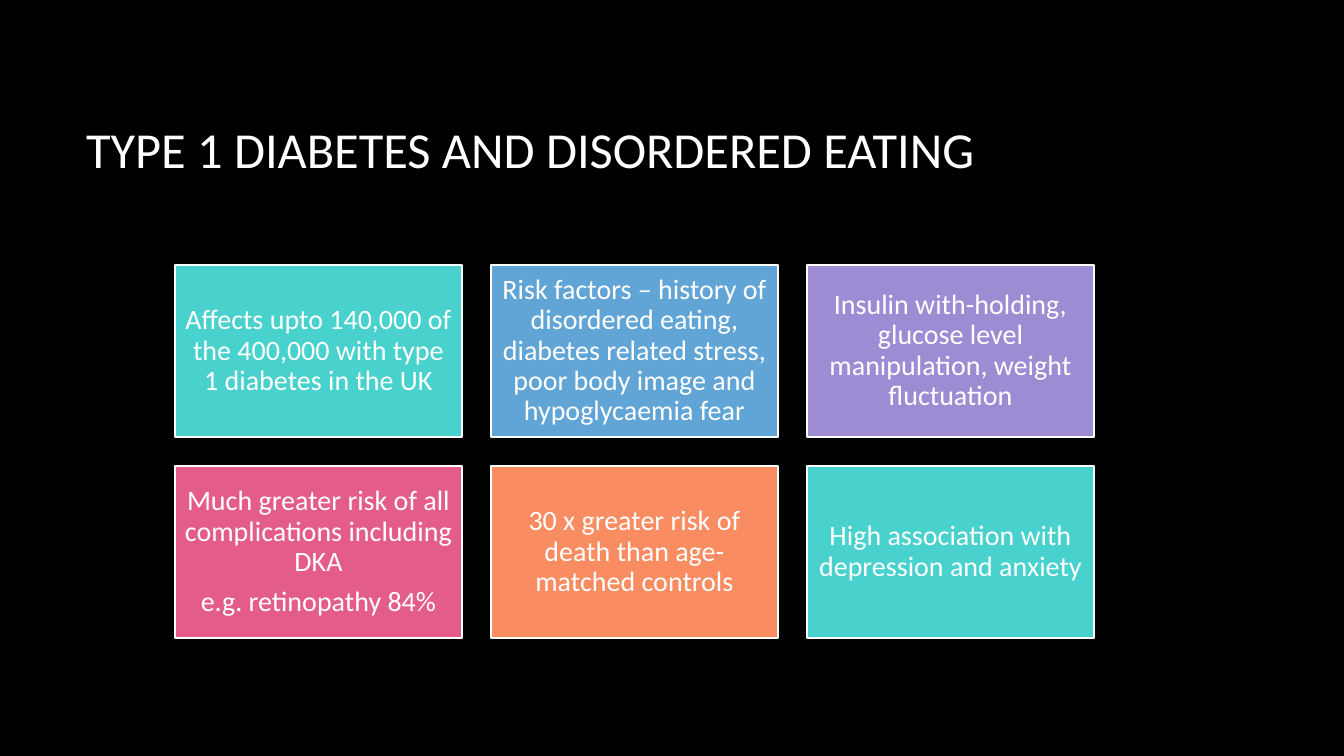
from pptx import Presentation
from pptx.dml.color import RGBColor
from pptx.enum.shapes import MSO_SHAPE as Shape
from pptx.enum.text import MSO_ANCHOR as Anchor, MSO_AUTO_SIZE as AutoSize, PP_ALIGN as Align
from pptx.util import Pt

PX = 914400 / 100.8


class Theme:
    font = "Calibri"
    background = "000000"
    white = "FFFFFF"
    teal = "49D1CD"
    blue = "61A5D6"
    purple = "9D8CD3"
    pink = "E45C8A"
    orange = "F98C61"
    title_size = 36
    card_size = 20


def px(length):
    return round(length * PX)


def write_text(frame, text, size, align=Align.LEFT, line_spacing=None, gap=0, inset=None):
    frame.word_wrap = True
    frame.auto_size = AutoSize.NONE
    frame.vertical_anchor = Anchor.MIDDLE
    if inset is not None:
        frame.margin_left = frame.margin_right = px(inset)
        frame.margin_top = frame.margin_bottom = px(inset)
    frame.text = text
    for index, paragraph in enumerate(frame.paragraphs):
        paragraph.alignment = align
        paragraph.line_spacing = line_spacing
        paragraph.space_before = Pt(gap if index else 0)
        paragraph.font.name = Theme.font
        paragraph.font.size = Pt(size)
        paragraph.font.color.rgb = RGBColor.from_string(Theme.white)


presentation = Presentation()
presentation.slide_width, presentation.slide_height = px(1344), px(756)
slide = presentation.slides.add_slide(presentation.slide_layouts[5])
slide.background.fill.solid()
slide.background.fill.fore_color.rgb = RGBColor.from_string(Theme.background)

# Title
title = slide.shapes.title
title.left, title.top, title.width, title.height = px(76), px(68), px(1117), px(160)
write_text(title.text_frame, "TYPE 1 DIABETES AND DISORDERED EATING", Theme.title_size)

# Fact cards, three to a row
CARDS = [
    ("Affects upto 140,000 of the 400,000 with type 1 diabetes in the UK", Theme.teal),
    ("Risk factors – history of disordered eating, diabetes related stress, "
     "poor body image and hypoglycaemia fear", Theme.blue),
    ("Insulin with-holding, glucose level manipulation, weight fluctuation", Theme.purple),
    ("Much greater risk of all complications including DKA\ne.g. retinopathy 84%", Theme.pink),
    ("30 x greater risk of death than age-matched controls", Theme.orange),
    ("High association with depression and anxiety", Theme.teal),
]
COLUMNS = 3
GRID_LEFT, GRID_TOP = 175, 265
CARD_WIDTH, CARD_HEIGHT, CARD_GAP = 287, 172, 29

for index, (text, color) in enumerate(CARDS):
    row, column = divmod(index, COLUMNS)
    card = slide.shapes.add_shape(
        Shape.RECTANGLE,
        px(GRID_LEFT + column * (CARD_WIDTH + CARD_GAP)),
        px(GRID_TOP + row * (CARD_HEIGHT + CARD_GAP)),
        px(CARD_WIDTH), px(CARD_HEIGHT))
    card.shadow.inherit = False
    card.fill.solid()
    card.fill.fore_color.rgb = RGBColor.from_string(color)
    card.line.color.rgb = RGBColor.from_string(Theme.white)
    card.line.width = Pt(1.5)
    write_text(card.text_frame, text, Theme.card_size, align=Align.CENTER,
               line_spacing=0.9, gap=7, inset=8)

presentation.save("out.pptx")
